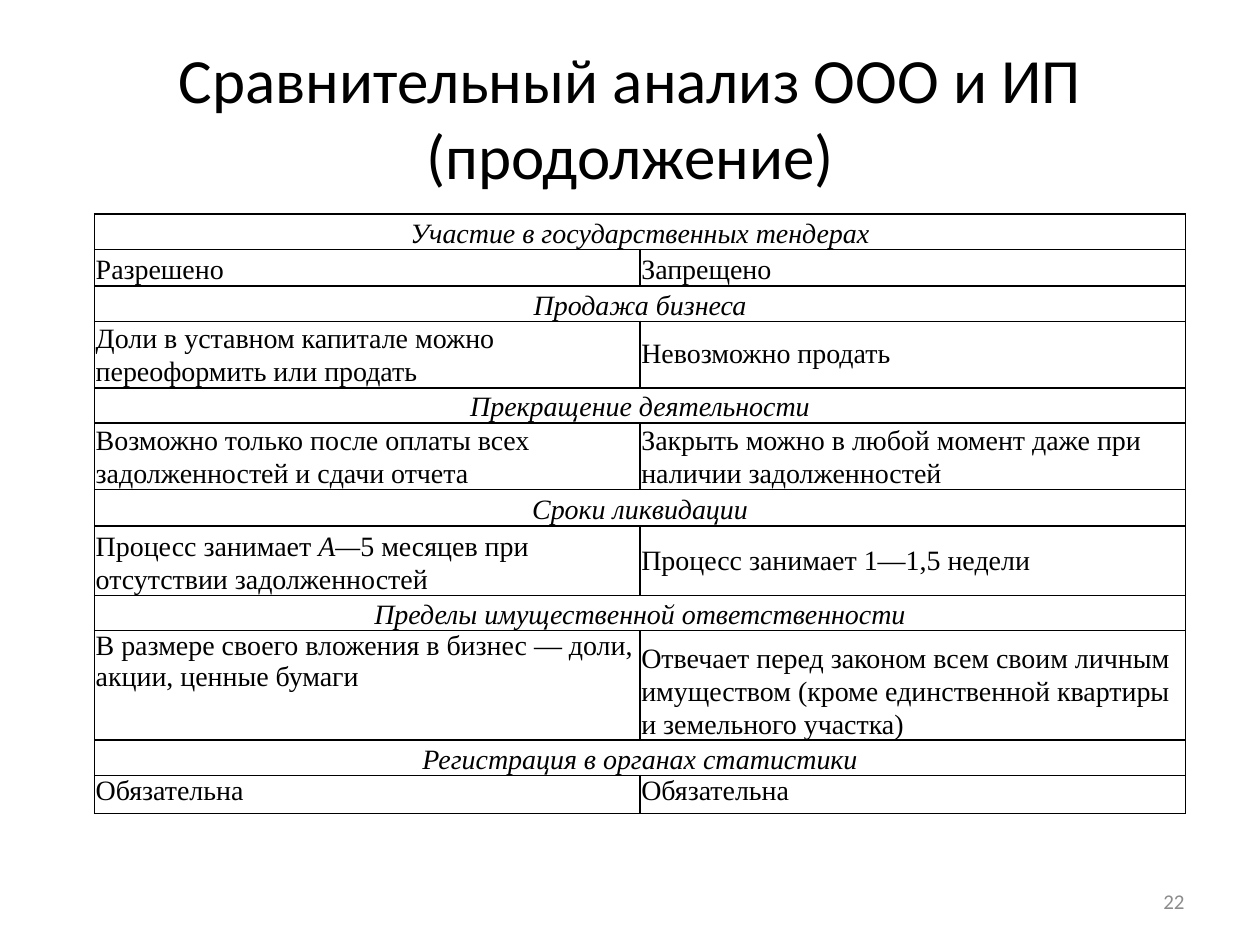
from dataclasses import dataclass

from lxml import etree
from pptx import Presentation
from pptx.dml.color import RGBColor
from pptx.enum.text import MSO_ANCHOR, PP_ALIGN
from pptx.oxml.ns import qn
from pptx.util import Inches, Pt

TOP, MIDDLE, BOTTOM = MSO_ANCHOR.TOP, MSO_ANCHOR.MIDDLE, MSO_ANCHOR.BOTTOM
LEFT, CENTER, RIGHT = PP_ALIGN.LEFT, PP_ALIGN.CENTER, PP_ALIGN.RIGHT
TITLE_ONLY = 5


@dataclass(frozen=True)
class Theme:
    text: RGBColor = RGBColor(0, 0, 0)
    muted: RGBColor = RGBColor(0x8C, 0x8C, 0x8C)
    cell: RGBColor = RGBColor(0xFF, 0xFF, 0xFF)
    border: str = "000000"
    border_width: int = Pt(1)
    title_font: str = "Calibri"
    table_font: str = "Times New Roman"
    title_size: int = Pt(36)
    table_size: int = Pt(16)
    number_size: int = Pt(12)


THEME = Theme()


@dataclass(frozen=True)
class Entry:
    """One table cell: runs are (text, italic) pairs."""
    runs: tuple
    anchor: MSO_ANCHOR = BOTTOM
    spacing: float = 1.0
    alignment: PP_ALIGN = LEFT


def plain(text, anchor=BOTTOM, spacing=1.0):
    return Entry(((text, False),), anchor, spacing)


def heading(text):
    return Entry(((text, True),), alignment=CENTER)


# Criterion, heading height, company entry, entrepreneur entry, entry height
COMPARISON = [
    ("Участие в государственных тендерах", 0.28,
     plain("Разрешено"), plain("Запрещено"), 0.29),
    ("Продажа бизнеса", 0.28,
     plain("Доли в уставном капитале можно переоформить или продать", spacing=1.07),
     plain("Невозможно продать", MIDDLE), 0.48),
    ("Прекращение деятельности", 0.28,
     plain("Возможно только после оплаты всех задолженностей и сдачи отчета", spacing=1.07),
     plain("Закрыть можно в любой момент даже при наличии задолженностей", spacing=1.07), 0.48),
    ("Сроки ликвидации", 0.29,
     Entry((("Процесс занимает ", False), ("А—", True),
            ("5 месяцев при отсутствии задолженностей", False)), spacing=1.07),
     plain("Процесс занимает 1—1,5 недели", MIDDLE), 0.55),
    ("Пределы имущественной ответственности", 0.28,
     plain("В размере своего вложения в бизнес — доли, акции, ценные бумаги", TOP),
     plain("Отвечает перед законом всем своим личным имуществом "
           "(кроме единственной квартиры и земельного участка)", spacing=1.05), 0.87),
    ("Регистрация в органах статистики", 0.28,
     plain("Обязательна", TOP), plain("Обязательна", TOP), 0.3),
]


def format_run(run, font, size, color, italic=False):
    run.font.name = font
    run.font.size = size
    run.font.color.rgb = color
    run.font.italic = italic


def place_title(slide, text, left, top, width, height):
    title = slide.shapes.title
    title.left, title.top, title.width, title.height = left, top, width, height
    frame = title.text_frame
    frame.text = text
    frame.word_wrap = True
    frame.vertical_anchor = MIDDLE
    paragraph = frame.paragraphs[0]
    paragraph.alignment = CENTER
    format_run(paragraph.runs[0], THEME.title_font, THEME.title_size, THEME.text)


def add_borders(cell):
    properties = cell._tc.get_or_add_tcPr()
    for side in ("lnL", "lnR", "lnT", "lnB"):
        line = etree.SubElement(properties, qn(f"a:{side}"), w=str(THEME.border_width))
        fill = etree.SubElement(line, qn("a:solidFill"))
        etree.SubElement(fill, qn("a:srgbClr"), val=THEME.border)


def style_cell(cell):
    add_borders(cell)
    cell.fill.solid()
    cell.fill.fore_color.rgb = THEME.cell
    cell.margin_left = cell.margin_right = Inches(0.01)
    cell.margin_top = cell.margin_bottom = 0


def fill_cell(cell, entry):
    cell.vertical_anchor = entry.anchor
    paragraph = cell.text_frame.paragraphs[0]
    paragraph.alignment = entry.alignment
    paragraph.line_spacing = entry.spacing
    for text, italic in entry.runs:
        run = paragraph.add_run()
        run.text = text
        format_run(run, THEME.table_font, THEME.table_size, THEME.text, italic)


def place_comparison(slide, left, top, width):
    heights = [Inches(height) for row in COMPARISON for height in (row[1], row[4])]
    table = slide.shapes.add_table(len(heights), 2, left, top, width, sum(heights)).table
    table.first_row = table.horz_banding = False
    for row, height in zip(table.rows, heights):
        row.height = height
    for cell in (cell for row in table.rows for cell in row.cells):
        style_cell(cell)

    # Each criterion spans the table above its pair of entries
    for index, (criterion, _, company, entrepreneur, _) in enumerate(COMPARISON):
        row = 2 * index
        table.cell(row, 0).merge(table.cell(row, 1))
        fill_cell(table.cell(row, 0), heading(criterion))
        fill_cell(table.cell(row + 1, 0), company)
        fill_cell(table.cell(row + 1, 1), entrepreneur)


def place_slide_number(slide, number, left, top, width, height):
    frame = slide.shapes.add_textbox(left, top, width, height).text_frame
    frame.text = number
    frame.word_wrap = True
    frame.vertical_anchor = MIDDLE
    paragraph = frame.paragraphs[0]
    paragraph.alignment = RIGHT
    format_run(paragraph.runs[0], THEME.title_font, THEME.number_size, THEME.muted)


def main():
    presentation = Presentation()
    presentation.slide_width, presentation.slide_height = Inches(10), Inches(7.5)
    slide = presentation.slides.add_slide(presentation.slide_layouts[TITLE_ONLY])
    place_title(slide, "Сравнительный анализ ООО и ИП (продолжение)",
                Inches(0.5), Inches(0.3), Inches(9), Inches(1.25))
    place_comparison(slide, Inches(0.75), Inches(1.7), Inches(8.66))
    place_slide_number(slide, "22", Inches(7.17), Inches(6.95), Inches(2.33), Inches(0.4))
    presentation.save("out.pptx")


if __name__ == "__main__":
    main()
